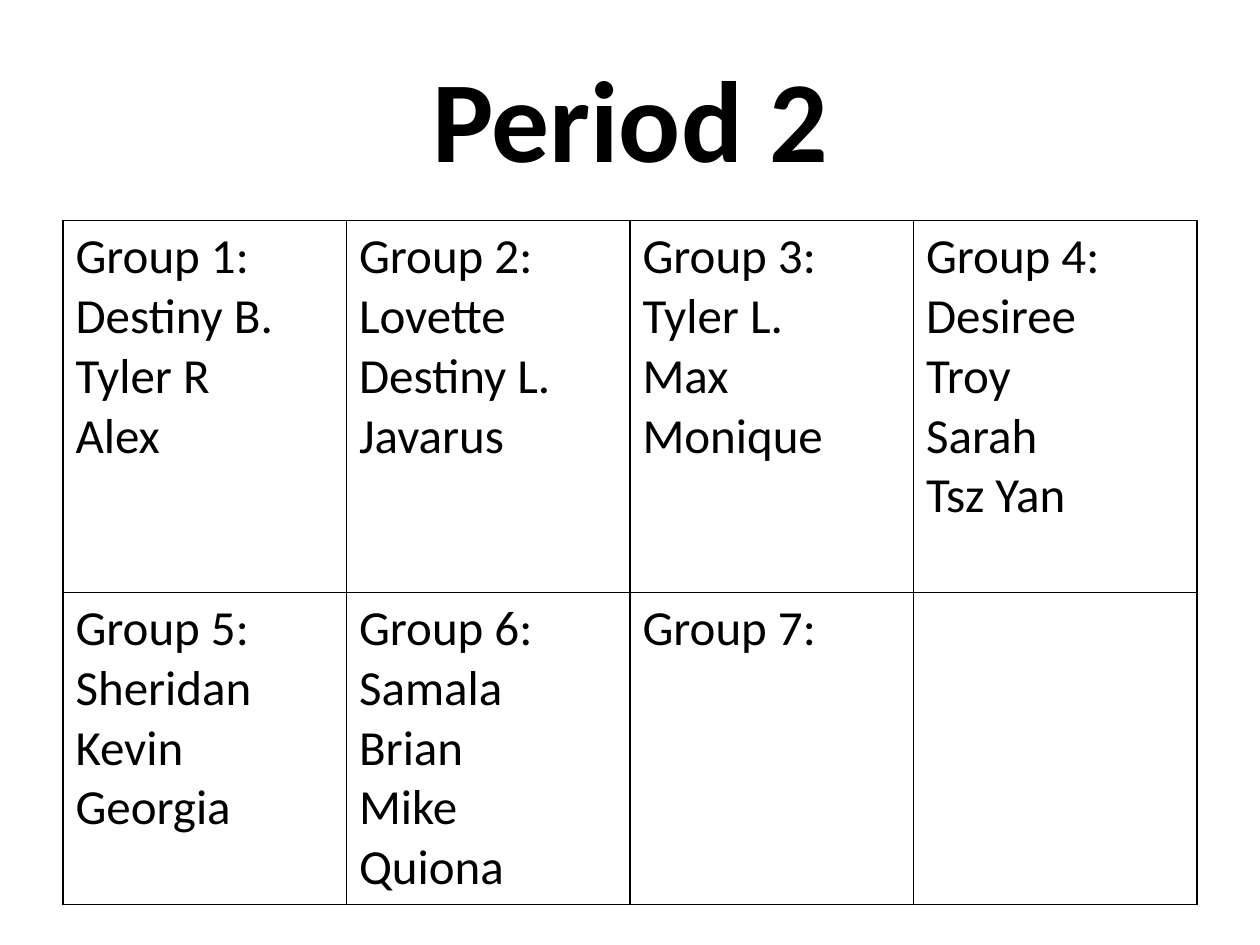
from dataclasses import dataclass

import pptx
import pptx.dml.color
import pptx.enum.text
import pptx.oxml
import pptx.oxml.ns
import pptx.util

Pt = pptx.util.Pt
FONT = "Calibri"
BLACK = "000000"
COLUMNS = 4
COLUMN_WIDTH = 162
ROW_HEIGHTS = (212.5, 178.3)


@dataclass
class Group:
    number: int
    members: tuple[str, ...] = ()

    def lines(self) -> list[str]:
        return [f"Group {self.number}:", *self.members]


GROUPS = [
    Group(1, ("Destiny B.", "Tyler R", "Alex")),
    Group(2, ("Lovette", "Destiny L.", "Javarus")),
    Group(3, ("Tyler L.", "Max", "Monique")),
    Group(4, ("Desiree", "Troy", "Sarah", "Tsz Yan")),
    Group(5, ("Sheridan", "Kevin", "Georgia")),
    Group(6, ("Samala", "Brian", "Mike", "Quiona")),
    Group(7),
]


def color(value: str) -> pptx.dml.color.RGBColor:
    return pptx.dml.color.RGBColor.from_string(value)


def write_lines(frame, lines: list[str], size: float, bold: bool = False) -> None:
    frame.text = "\n".join(lines)
    for paragraph in frame.paragraphs:
        paragraph.font.name = FONT
        paragraph.font.size = Pt(size)
        paragraph.font.bold = bold
        paragraph.font.color.rgb = color(BLACK)


def add_borders(cell, value: str, width: float) -> None:
    properties = cell._tc.get_or_add_tcPr()
    for side in ("lnL", "lnR", "lnT", "lnB"):
        properties.append(pptx.oxml.parse_xml(
            f'<a:{side} {pptx.oxml.ns.nsdecls("a")} w="{Pt(width)}">'
            f'<a:solidFill><a:srgbClr val="{value}"/></a:solidFill></a:{side}>'
        ))


def add_title(page, text: str) -> None:
    title = page.shapes.title
    title.left, title.top = Pt(36), Pt(21.6)
    title.width, title.height = Pt(648), Pt(90)
    frame = title.text_frame
    frame.vertical_anchor = pptx.enum.text.MSO_ANCHOR.MIDDLE
    write_lines(frame, [text], 66, bold=True)
    frame.paragraphs[0].alignment = pptx.enum.text.PP_ALIGN.CENTER


def add_group_table(page, groups: list[Group]) -> None:
    table = page.shapes.add_table(
        len(ROW_HEIGHTS), COLUMNS, Pt(36), Pt(126),
        Pt(COLUMNS * COLUMN_WIDTH), Pt(sum(ROW_HEIGHTS)),
    ).table
    table.first_row = False
    table.horz_banding = False
    for row, height in zip(table.rows, ROW_HEIGHTS):
        row.height = Pt(height)
    for cell in table.iter_cells():
        add_borders(cell, BLACK, 1)
        cell.fill.background()
    for cell, group in zip(table.iter_cells(), groups):
        write_lines(cell.text_frame, group.lines(), 28)


def main() -> None:
    deck = pptx.Presentation()
    deck.slide_width, deck.slide_height = Pt(720), Pt(540)
    page = deck.slides.add_slide(deck.slide_layouts[5])
    add_title(page, "Period 2")
    add_group_table(page, GROUPS)
    deck.save("out.pptx")


if __name__ == "__main__":
    main()
